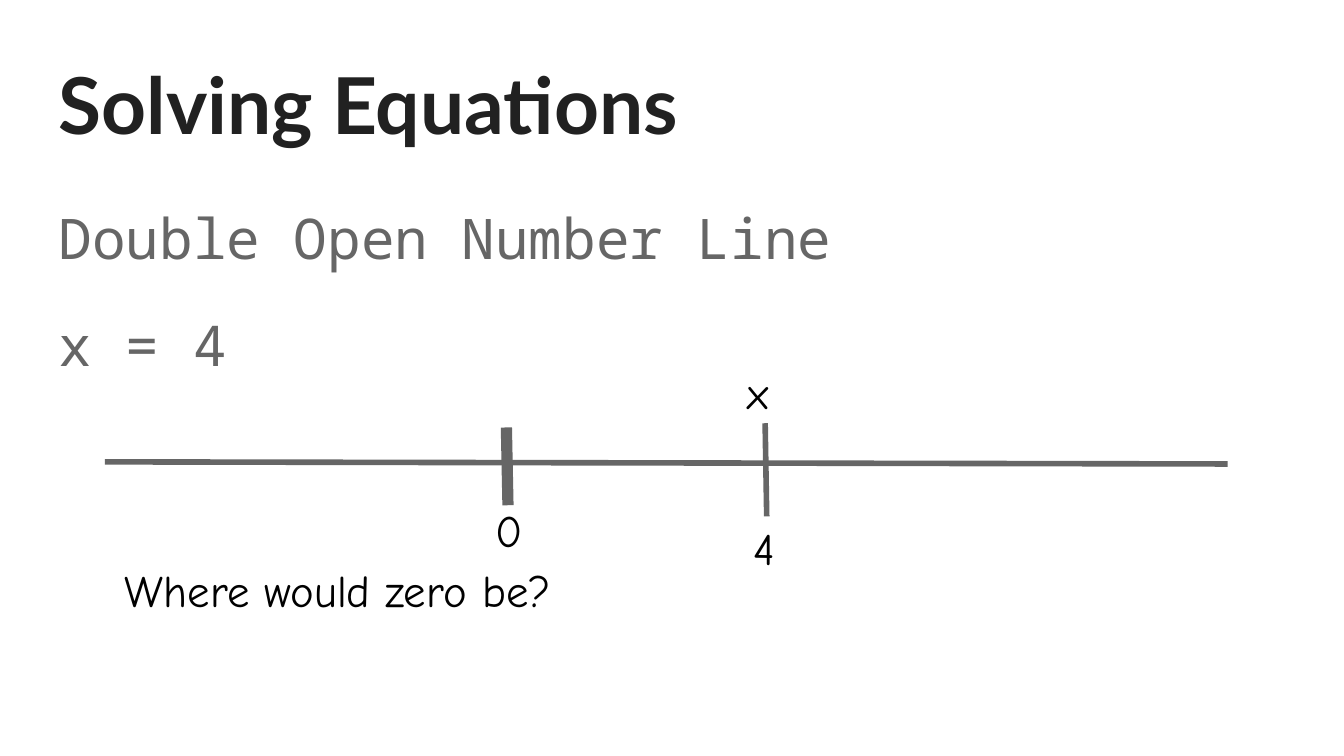
from lxml import etree
from pptx import Presentation
from pptx.dml.color import RGBColor
from pptx.enum.shapes import MSO_CONNECTOR
from pptx.enum.text import MSO_ANCHOR, MSO_AUTO_SIZE, PP_ALIGN
from pptx.oxml.ns import qn
from pptx.util import Cm, Pt

STRAIGHT = MSO_CONNECTOR.STRAIGHT
TOP = MSO_ANCHOR.TOP
NO_FIT = MSO_AUTO_SIZE.NONE
LEFT = PP_ALIGN.LEFT

INK = RGBColor(0x21, 0x21, 0x21)
GRAY = RGBColor(0x66, 0x66, 0x66)
BLACK = RGBColor(0, 0, 0)


def write(p, text, font, size, color, bold=False, spacing=1.0, gap=0):
    p.alignment = LEFT
    p.line_spacing = spacing
    p.space_before = p.space_after = Pt(gap)
    r = p.add_run()
    r.text = text
    r.font.name = font
    r.font.size = Pt(size)
    r.font.bold = bold
    r.font.color.rgb = color


class Deck:
    title_font = "Lato"
    body_font = "Noto Sans Mono"
    label_font = "Comic Neue"

    def __init__(self, prs):
        self.s = prs.slides.add_slide(prs.slide_layouts[1])

    def frame(self, sp, x, y, w, h):
        sp.left, sp.top, sp.width, sp.height = Cm(x), Cm(y), Cm(w), Cm(h)
        tf = sp.text_frame
        tf.word_wrap = True
        tf.auto_size = NO_FIT
        tf.vertical_anchor = TOP
        tf.margin_left = tf.margin_right = Cm(0.25)
        tf.margin_top = tf.margin_bottom = Cm(0.25)
        return tf

    def title(self, text, *box):
        tf = self.frame(self.s.shapes.title, *box)
        write(tf.paragraphs[0], text, self.title_font, 42, INK, bold=True)

    def body(self, lines, *box):
        tf = self.frame(self.s.placeholders[1], *box)
        for i, text in enumerate(lines):
            p = tf.add_paragraph() if i else tf.paragraphs[0]
            write(p, text, self.body_font, 30, GRAY, spacing=1.15, gap=16 if i else 0)
            pPr = p._p.get_or_add_pPr()
            pPr.set("marL", "0")
            pPr.set("indent", "0")
            etree.SubElement(pPr, qn("a:buNone"))

    def label(self, text, *box):
        sp = self.s.shapes.add_textbox(0, 0, 0, 0)
        tf = self.frame(sp, *box)
        write(tf.paragraphs[0], text, self.label_font, 24, BLACK)

    def line(self, x1, y1, x2, y2, width=3):
        c = self.s.shapes.add_connector(STRAIGHT, Cm(x1), Cm(y1), Cm(x2), Cm(y2))
        c.line.color.rgb = GRAY
        c.line.width = Pt(width)
        etree.SubElement(c._element.spPr, qn("a:effectLst"))


def main():
    prs = Presentation()
    prs.slide_width, prs.slide_height = Cm(25.4), Cm(14.29)
    deck = Deck(prs)

    deck.title("Solving Equations", 0.86, 0.81, 23.67, 2.24)
    deck.body(["Double Open Number Line", "x = 4"], 0.86, 3.4, 23.67, 9.27)

    deck.line(1.98, 8.73, 23.2, 8.77)
    deck.line(14.46, 8, 14.49, 9.76)
    deck.label("4", 14, 9.6, 0.97, 1.32)
    deck.label("x", 13.87, 6.65, 1.09, 1.24)
    deck.label("Where would zero be?", 2.11, 10.39, 10.01, 2.24)
    deck.line(9.57, 8.08, 9.6, 9.55, width=6)
    deck.label("0", 9.12, 9.25, 0.74, 1.14)

    prs.save("out.pptx")


if __name__ == "__main__":
    main()
